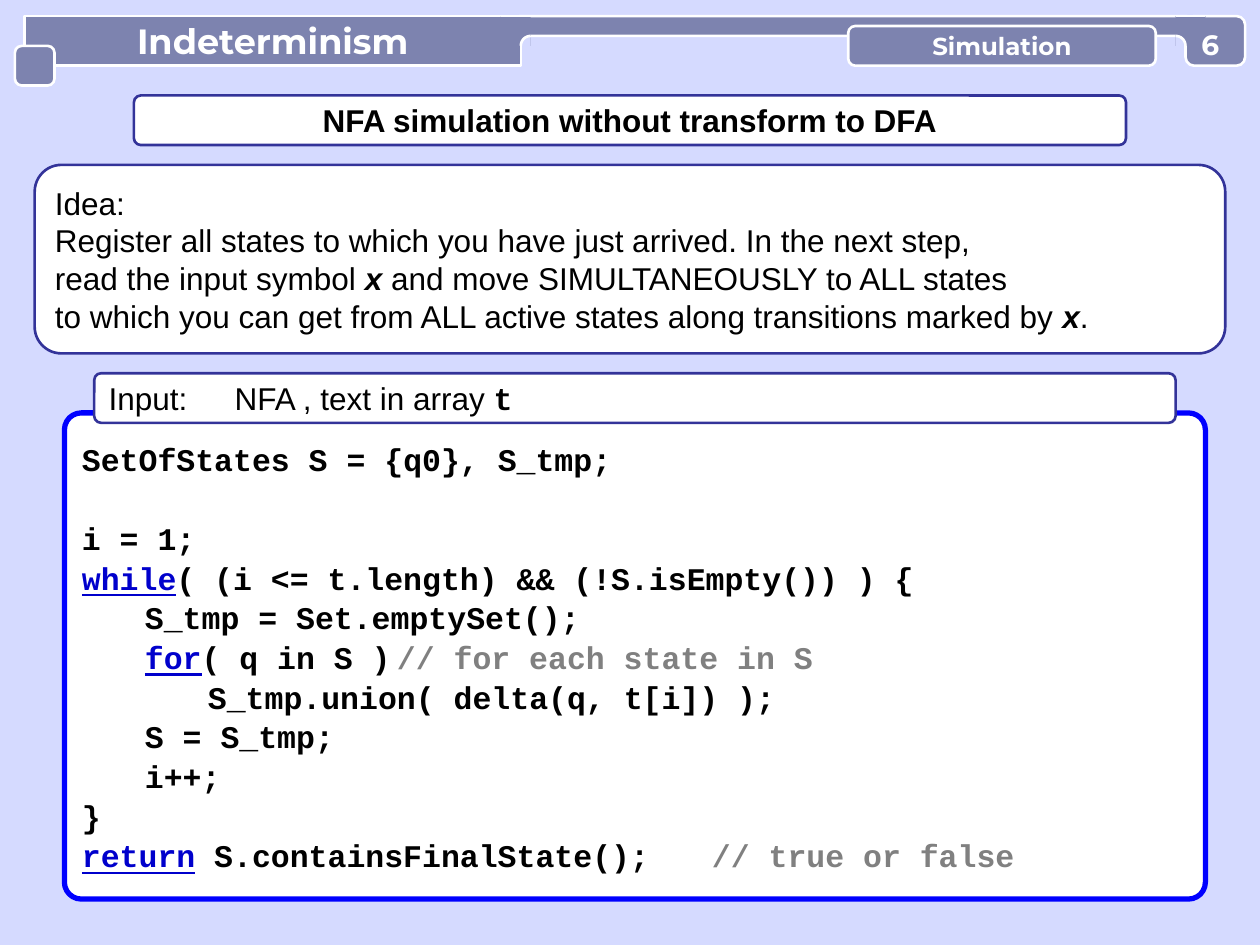
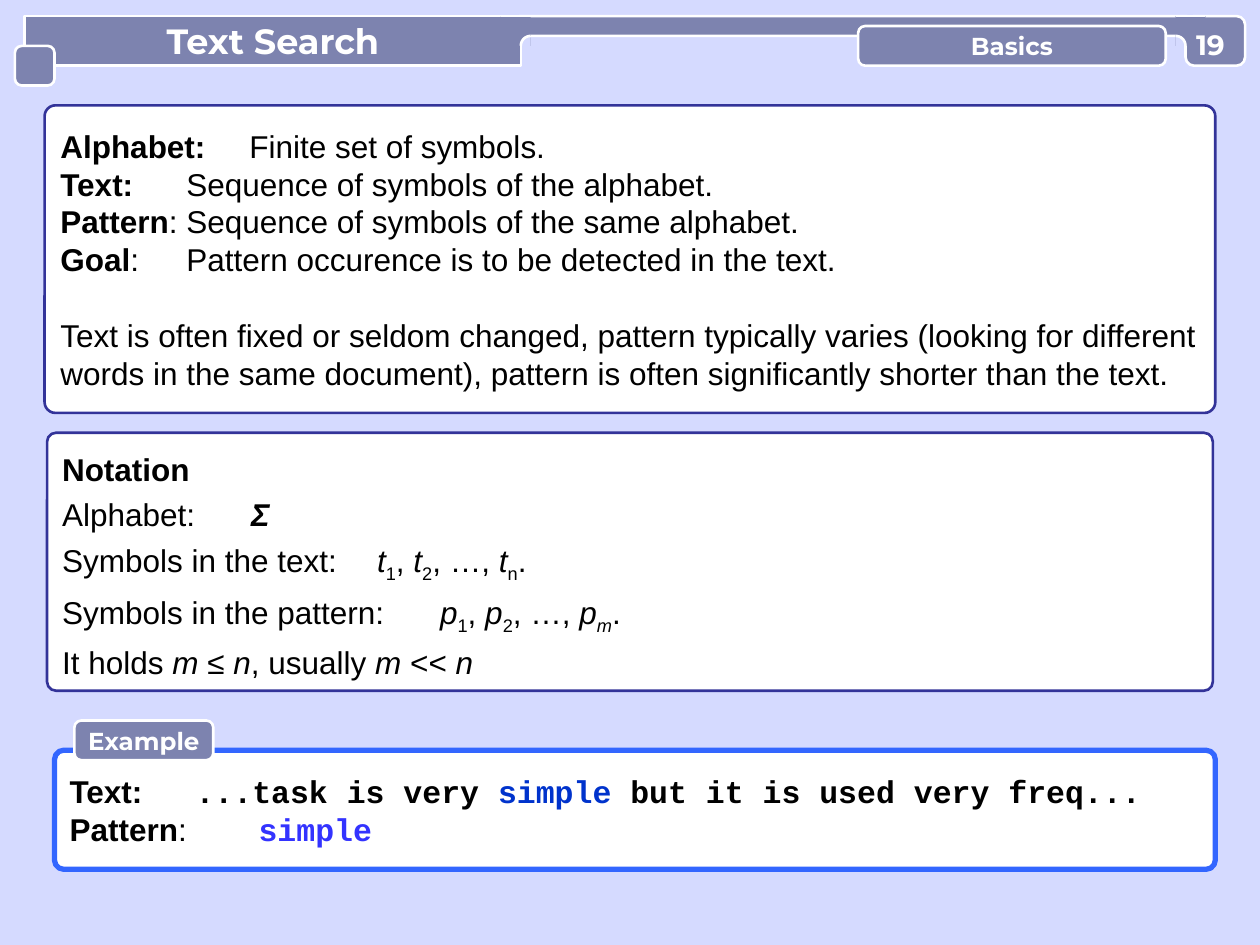
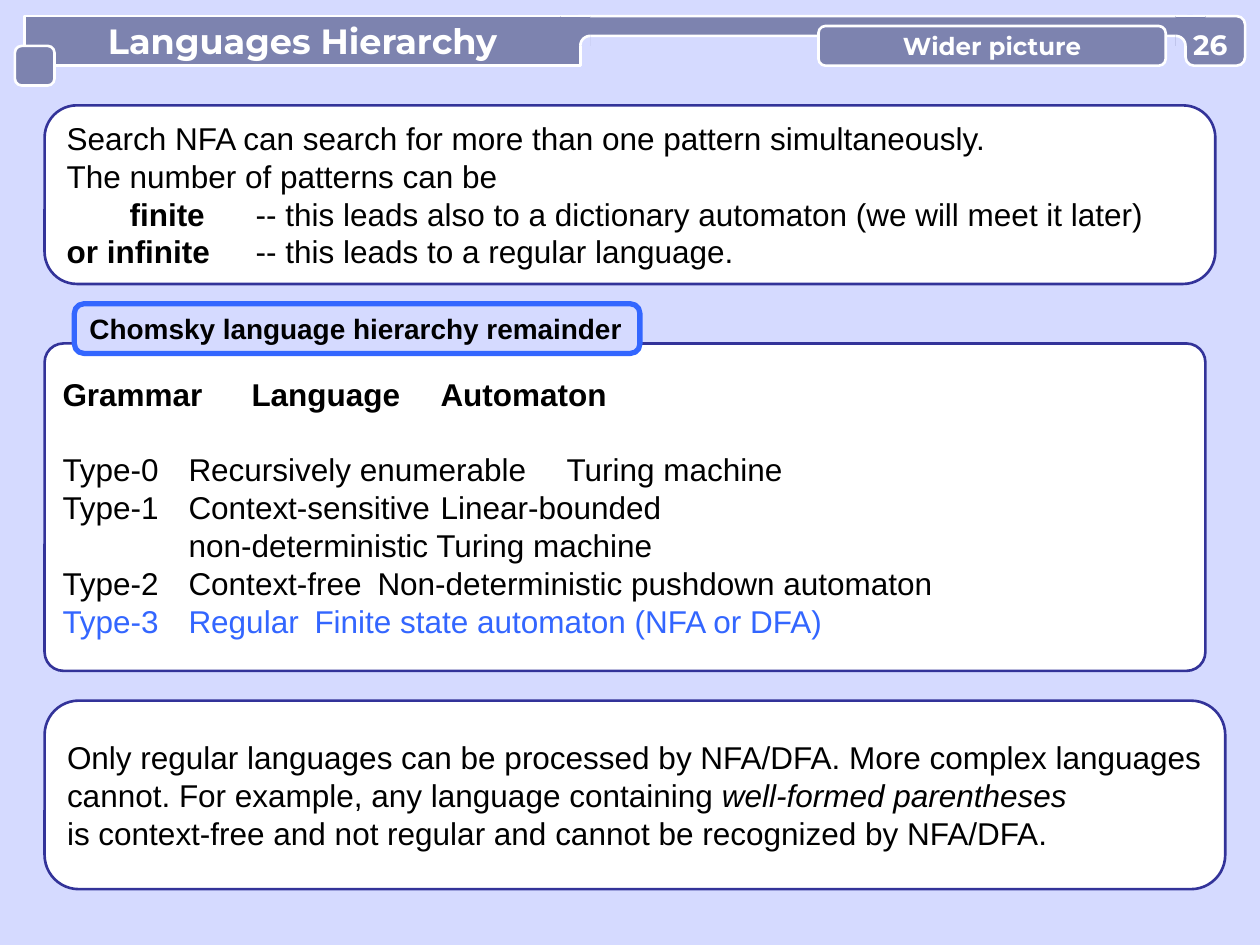
import math
import lxml.etree
import pptx
import pptx.dml.color
import pptx.enum.shapes
import pptx.enum.text
import pptx.oxml.ns
import pptx.util

# Theme: colours, type sizes, box looks and run styles
THEME = {
    "page": "D5DAFF", "bar": "7D83AF", "white": "FFFFFF", "black": "000000",
    "navy": "333399", "blue": "0000FF", "sky": "3366FF", "key": "0000CC",
    "hit": "0033CC", "find": "3333FF", "grey": "808080",
    "sans": "Arial", "mono": "Courier New", "head": "Montserrat",
    "title": 20, "body": 18, "page_no": 16, "label": 16, "tag": 14,
}
LOOKS = {  # fill, line, line width
    "card": ("white", "navy", 1.5),
    "code": ("white", "blue", 3),
    "demo": ("white", "sky", 3),
    "mark": ("page", "sky", 3),
    "bar": ("bar", "white", 1.5),
}
STYLES = {
    "plain": {},
    "b": {"bold": True},
    "i": {"italic": True},
    "bi": {"bold": True, "italic": True},
    "sub": {"base": -25},
    "isub": {"italic": True, "base": -25},
    "sky": {"ink": "sky"},
    "code": {"face": "mono", "bold": True},
    "key": {"face": "mono", "bold": True, "ink": "key", "line": True},
    "note": {"face": "mono", "bold": True, "ink": "grey"},
    "hit": {"face": "mono", "bold": True, "ink": "hit"},
    "find": {"face": "mono", "bold": True, "ink": "find"},
    "title": {"face": "head", "bold": True, "ink": "white", "size": "title"},
    "tag": {"face": "head", "bold": True, "ink": "white", "size": "tag"},
    "page_no": {"face": "head", "bold": True, "ink": "white", "size": "page_no"},
    "label": {"bold": True, "size": "label"},
}

# Content. Boxes are (column, row, columns, rows) on a 1 mm grid.
# A line is a list of runs: plain text, or (text, style).
# "gaps" maps a line's index to the points of space above it.
CHAR = 3.81  # width of one code letter in mm
SLIDES = [
    {
        "title": "Indeterminism", "wide": 100, "no": "6",
        "tag": ("Simulation", (171, 5, 62, 8)),
        "cards": [
            {
                "at": (13, 83, 230, 98), "rad": 3.4, "look": "code", "style": "code",
                "lead": 1.05, "gaps": {1: 22.7},
                "tabs": [2 * CHAR, 4 * CHAR, 33 * CHAR],
                "lines": [
                    ["SetOfStates S = {q0}, S_tmp;"],
                    ["i = 1;"],
                    [("while", "key"), "( (i <= t.length) && (!S.isEmpty()) ) {"],
                    ["\tS_tmp = Set.emptySet();"],
                    ["\t", ("for", "key"), "( q in S )\t",
                     ("// for each state in S", "note")],
                    ["\t\tS_tmp.union( delta(q, t[i]) );"],
                    ["\tS = S_tmp;"],
                    ["\ti++;"],
                    ["}"],
                    [("return", "key"), " S.containsFinalState();\t",
                     ("// true or false", "note")],
                ],
            },
            {
                "at": (19, 75, 218, 10), "rad": 1.4, "tabs": [19.35],
                "lines": [["Input:\tNFA , text in array ", ("t", "code")]],
            },
            {
                "at": (27, 19, 200, 10), "rad": 1.4, "style": "b", "mid": True,
                "lines": [["NFA simulation without transform to DFA"]],
            },
            {
                "at": (7, 33, 240, 38), "rad": 5.4,
                "lines": [
                    ["Idea:"],
                    ["Register all states to which you have just arrived. "
                     "In the next step,"],
                    ["read the input symbol ", ("x", "bi"),
                     " and move SIMULTANEOUSLY to ALL states"],
                    ["to which you can get from ALL active states along "
                     "transitions marked by ", ("x", "bi"), "."],
                ],
            },
        ],
    },
    {
        "title": "Text Search", "wide": 100, "no": "19",
        "tag": ("Basics", (173, 5, 62, 8)),
        "cards": [
            {
                "at": (9, 21, 236, 62), "rad": 2.2, "tabs": [30.5], "gaps": {4: 21.6},
                "lines": [
                    [("Alphabet:", "b"), "\tFinite set of symbols."],
                    [("Text:", "b"), "\tSequence of symbols of the alphabet."],
                    [("Pattern", "b"), ":\tSequence of symbols of the same alphabet."],
                    [("Goal", "b"),
                     ":\tPattern occurence is to be detected in the text."],
                    ["Text is often fixed or seldom changed, pattern typically "
                     "varies (looking for different"],
                    ["words in the same document), pattern is often "
                     "significantly shorter than the text."],
                ],
            },
            {
                "at": (9.5, 87, 235, 52), "rad": 1.8, "lead": 1.2,
                "tabs": [30.2, 60.7, 70.1],
                "lines": [
                    [("Notation", "b")],
                    ["Alphabet:\t", ("Σ", "bi")],
                    ["Symbols in the text:\t", ("t", "i"), ("1", "sub"), ", ",
                     ("t", "i"), ("2", "sub"), ", …, ", ("t", "i"), ("n", "sub"), "."],
                    ["Symbols in the pattern:\t", ("p", "i"), ("1", "sub"), ", ",
                     ("p", "i"), ("2", "sub"), ", …, ", ("p", "i"), ("m", "isub"), "."],
                    ["It holds ", ("m ", "i"), "≤ ", ("n", "i"), ", usually ",
                     ("m ", "i"), "<< ", ("n", "i")],
                ],
            },
            {
                "at": (11, 151, 234, 24), "rad": 1.85, "look": "demo",
                "tabs": [29.8, 34.3],
                "lines": [
                    [("Text:", "b"), "\t", ("...task is very ", "code"),
                     ("simple", "hit"), (" but it is used very freq...", "code")],
                    [("Pattern", "b"), ":\t\t", ("simple", "find")],
                ],
            },
            {
                "at": (15, 145, 28, 8), "rad": 1.4, "look": "bar", "style": "tag",
                "mid": True, "lines": [["Example"]],
            },
        ],
    },
    {
        "title": "Languages Hierarchy", "wide": 112, "no": "26",
        "tag": ("Wider picture", (165, 5, 70, 8)),
        "cards": [
            {
                "at": (9, 21, 236, 36), "rad": 6.5, "tabs": [5.3, 32.6],
                "lines": [
                    ["Search NFA can search for more than one pattern simultaneously."],
                    ["The number of patterns can be"],
                    [("\tfinite", "b"), "\t-- this leads also to a dictionary "
                     "automaton (we will meet it later)"],
                    [("or infinite", "b"), "\t-- this leads to a regular language."],
                ],
            },
            {
                "at": (9, 69, 234, 66), "rad": 3.8, "tabs": [30.7, 109.2],
                "gaps": {1: 21.6},
                "lines": [
                    [("Grammar\tLanguage\tAutomaton", "b")],
                    ["Type-0\tRecursively enumerable\tTuring machine"],
                    ["Type-1\tContext-sensitive\tLinear-bounded"],
                    ["\t\tnon-deterministic Turing machine"],
                    ["Type-2\tContext-free\tNon-deterministic pushdown automaton"],
                    [("Type-3\tRegular\tFinite state automaton (NFA or DFA)", "sky")],
                ],
            },
            {
                "at": (15, 61, 114, 10), "rad": 1.9, "look": "mark", "style": "label",
                "lines": [["Chomsky language hierarchy remainder"]],
            },
            {
                "at": (9, 141, 238, 38), "rad": 6.9,
                "lines": [
                    ["Only regular languages can be processed by NFA/DFA. "
                     "More complex languages"],
                    ["cannot. For example, any language containing ",
                     ("well-formed parentheses", "i")],
                    ["is context-free and not regular and cannot be "
                     "recognized by NFA/DFA."],
                ],
            },
        ],
    },
]

# Grid and header measures
SHIFT = 0.25  # the grid starts a quarter row down
TOP, STRIP, BEND = 3, 4, 2  # header's first row, strip height, bend radius
NO_COL, STRIP_END = 239, 241
KIND = pptx.enum.shapes.MSO_SHAPE
qn = pptx.oxml.ns.qn


def col(x):
    return pptx.util.Mm(x)


def row(y):
    return pptx.util.Mm(y + SHIFT)


def place(at):
    x, y, wide, high = at
    return col(x), row(y), pptx.util.Mm(wide), pptx.util.Mm(high)


def tint(name):
    return pptx.dml.color.RGBColor.from_string(THEME[name])


def paint(shape, fill=None, line=None, width=1.5):
    """Set fill and line; None means there is none."""
    shape.shadow.inherit = False
    if fill:
        shape.fill.solid()
        shape.fill.fore_color.rgb = tint(fill)
    else:
        shape.fill.background()
    if line:
        shape.line.color.rgb = tint(line)
        shape.line.width = pptx.util.Pt(width)
    else:
        shape.line.fill.background()


def box(slide, at, rad, look="bar", holder=None):
    """Draw a rounded box, or turn a placeholder into one."""
    if holder is None:
        shape = slide.shapes.add_shape(KIND.ROUNDED_RECTANGLE, *place(at))
    else:
        shape = holder
        shape.left, shape.top, shape.width, shape.height = place(at)
        lxml.etree.SubElement(shape._element.spPr, qn("a:prstGeom"), prst="roundRect")
    shape.adjustments[0] = rad / min(at[2:])
    paint(shape, *LOOKS[look])
    return shape


def add_run(para, text, style):
    look = STYLES[style]
    run = para.add_run()
    run.text = text
    font = run.font
    font.name = THEME[look.get("face", "sans")]
    font.size = pptx.util.Pt(THEME[look.get("size", "body")])
    font.bold = look.get("bold", False)
    font.italic = look.get("italic", False)
    font.underline = look.get("line", False)
    font.color.rgb = tint(look.get("ink", "black"))
    if "base" in look:
        run._r.get_or_add_rPr().set("baseline", str(look["base"] * 1000))


def write(shape, lines, style="plain", mid=False, lead=1, tabs=(), gaps=None):
    """Fill a shape with lines of runs."""
    frame = shape.text_frame
    frame.word_wrap = False
    frame.auto_size = pptx.enum.text.MSO_AUTO_SIZE.NONE
    frame.vertical_anchor = pptx.enum.text.MSO_ANCHOR.MIDDLE
    align = pptx.enum.text.PP_ALIGN
    for n, line in enumerate(lines):
        para = frame.add_paragraph() if n else frame.paragraphs[0]
        para.alignment = align.CENTER if mid else align.LEFT
        para.line_spacing = float(lead)
        para.space_before = pptx.util.Pt((gaps or {}).get(n, 0))
        # No bullet, no indent, own tab stops
        props = para._p.get_or_add_pPr()
        props.set("marL", "0")
        props.set("indent", "0")
        lxml.etree.SubElement(props, qn("a:buNone"))
        if tabs:
            stops = lxml.etree.SubElement(props, qn("a:tabLst"))
            for stop in tabs:
                lxml.etree.SubElement(stops, qn("a:tab"), pos=str(col(stop)), algn="l")
        for run in line:
            text, kind = (run, style) if isinstance(run, str) else run
            add_run(para, text, kind)


def bend(slide, edge, way):
    """Join the strip to a tab's edge; way is 1 to its right, -1 to its left."""
    ends = edge - 2 * BEND * way, edge + BEND * way
    size = 3 * BEND
    patch = slide.shapes.add_shape(KIND.RECTANGLE, *place((min(ends), TOP, size, size)))
    paint(patch, "bar")
    rim = slide.shapes.add_connector(
        pptx.enum.shapes.MSO_CONNECTOR.STRAIGHT,
        col(ends[0]), row(TOP), col(ends[1]), row(TOP))
    rim.line.color.rgb = tint("white")
    rim.line.width = pptx.util.Pt(1.5)
    lxml.etree.SubElement(rim._element.spPr, qn("a:effectLst"))

    # Quarter circle: a wedge in the page colour, then its white rim
    mid_x, mid_y = ends[1], TOP + STRIP + BEND
    turns = [math.radians(deg) for deg in range(0, 91, 10)]
    arc = [(col(mid_x - way * BEND * math.cos(t)), row(mid_y - BEND * math.sin(t)))
           for t in turns]
    wedge = slide.shapes.build_freeform(*arc[0])
    wedge.add_line_segments(arc[1:] + [(col(mid_x), row(mid_y))])
    paint(wedge.convert_to_shape(), "page")
    curve = slide.shapes.build_freeform(*arc[0])
    curve.add_line_segments(arc[1:], close=False)
    paint(curve.convert_to_shape(), None, "white")


def header(slide, item):
    """Title tab, strip, corner square, section tag and page number."""
    edge = 5 + item["wide"]
    title = box(slide, (5, TOP, item["wide"], 10), 1.9, holder=slide.shapes.title)
    write(title, [[item["title"]]], "title", mid=True)
    start = edge - BEND
    box(slide, (start, TOP, STRIP_END - start, STRIP), STRIP / 2)
    bend(slide, edge, 1)
    box(slide, (3, 9, 8, 8), 1.4)
    box(slide, (NO_COL, TOP, 12, 10), 1.7)
    bend(slide, NO_COL, -1)
    name, at = item["tag"]
    write(box(slide, at, 1.4), [[name]], "tag", mid=True)
    number = slide.shapes.add_textbox(*place((NO_COL, 5, 10, 7.5)))
    frame = number.text_frame
    frame.margin_left = frame.margin_right = 0
    frame.margin_top = frame.margin_bottom = 0
    write(number, [[item["no"]]], "page_no", mid=True)


def main():
    deck = pptx.Presentation()
    deck.slide_width = pptx.util.Inches(10)
    deck.slide_height = pptx.util.Inches(7.5)
    for item in SLIDES:
        slide = deck.slides.add_slide(deck.slide_layouts[1])
        slide.background.fill.solid()
        slide.background.fill.fore_color.rgb = tint("page")
        header(slide, item)
        # The first card takes the body placeholder
        holder = slide.placeholders[1]
        for card in item["cards"]:
            text = dict(card)
            at, rad = text.pop("at"), text.pop("rad")
            shape = box(slide, at, rad, text.pop("look", "card"), holder)
            write(shape, **text)
            holder = None
    deck.save("out.pptx")


if __name__ == "__main__":
    main()
